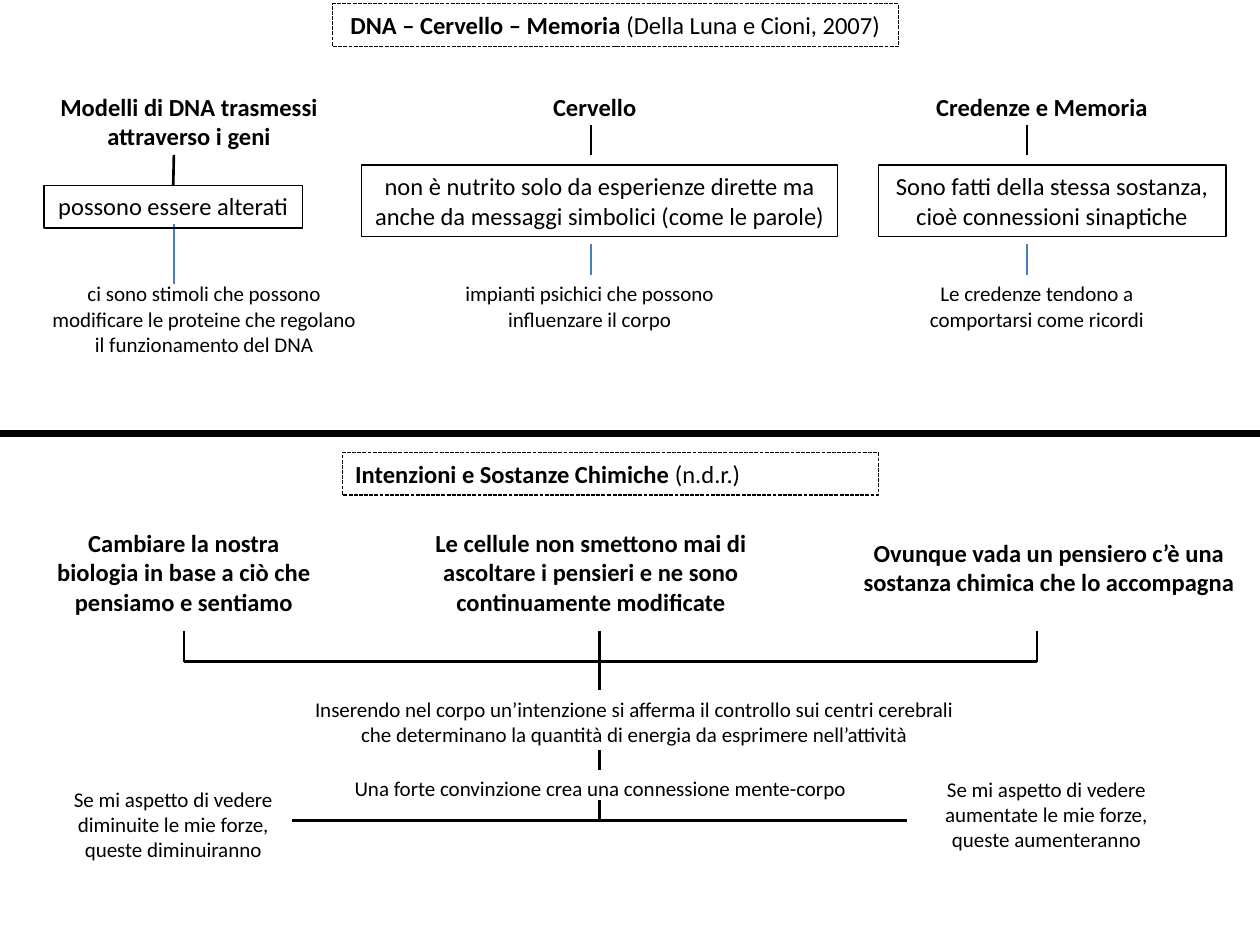
from lxml.etree import SubElement
from pptx import Presentation
from pptx.dml.color import RGBColor
from pptx.enum.dml import MSO_LINE
from pptx.enum.shapes import MSO_CONNECTOR, MSO_SHAPE
from pptx.enum.text import MSO_ANCHOR, MSO_AUTO_SIZE, PP_ALIGN
from pptx.oxml.ns import qn
from pptx.util import Inches, Pt

COLUMNS, ROWS = 100, 75
BLACK, BLUE = "000000", "4B7EBC"
HEADING, NOTE = 14, 12


def color(value):
    """Turn a hex string into a colour."""
    return RGBColor.from_string(value)


class ConceptMap:
    """Holds the style and the current slide, placed on a grid of columns and rows."""

    def __init__(self, deck):
        """Add a blank page to the deck."""
        self.column = deck.slide_width / COLUMNS
        self.row = deck.slide_height / ROWS
        self.page = deck.slides.add_slide(deck.slide_layouts[6])

    def place(self, *values):
        """Convert alternating columns and rows to lengths."""
        return [round(value * (self.row if index % 2 else self.column))
                for index, value in enumerate(values)]

    def fill_text(self, box, spans, size, align=PP_ALIGN.CENTER):
        """Fill a box with one paragraph made of (words, bold) spans."""
        frame = box.text_frame
        frame.word_wrap = True
        frame.auto_size = MSO_AUTO_SIZE.SHAPE_TO_FIT_TEXT
        frame.vertical_anchor = MSO_ANCHOR.TOP
        para = frame.paragraphs[0]
        para.alignment = align
        para.font.name = "Calibri"
        para.font.size = Pt(size)
        para.font.color.rgb = color(BLACK)
        for words, bold in spans:
            span = para.add_run()
            span.text = words
            if len(spans) > 1:
                span.font.bold = bold
            else:
                para.font.bold = bold

    def text(self, area, words, size=NOTE, bold=False):
        """Add centred text without a frame."""
        box = self.page.shapes.add_textbox(*self.place(*area))
        self.fill_text(box, [(words, bold)], size)

    def frame(self, area):
        """Add an empty outlined rectangle."""
        box = self.page.shapes.add_shape(MSO_SHAPE.RECTANGLE, *self.place(*area))
        box.shadow.inherit = False
        box.fill.background()
        box.line.color.rgb = color(BLACK)
        box.line.width = Pt(0.75)
        return box

    def statement(self, area, words):
        """Add a framed statement."""
        box = self.frame(area)
        self.fill_text(box, [(words, False)], HEADING)
        return box

    def title(self, area, topic, source, inset):
        """Add a dashed section title with its source."""
        box = self.frame(area)
        box.line.dash_style = MSO_LINE.SQUARE_DOT
        self.fill_text(box, [(topic, True), (source, False)], HEADING, PP_ALIGN.LEFT)
        box.text_frame.margin_left = Inches(inset)

    def line(self, start, end, width=1.5, tint=BLACK):
        """Add a straight connector between two grid points."""
        connector = self.page.shapes.add_connector(
            MSO_CONNECTOR.STRAIGHT, *self.place(*start, *end))
        connector.line.color.rgb = color(tint)
        connector.line.width = Pt(width)
        SubElement(connector._element.spPr, qn("a:effectLst"))
        return connector


def draw_memory(sheet):
    """Draw the upper half: DNA, brain and memory."""
    sheet.title((26.4, 0.3, 44.9, 3.4), "DNA – Cervello – Memoria ",
                "(Della Luna e Cioni, 2007)", 0.14)

    sheet.line((13.8, 22.5), (13.8, 17.8), 0.75, BLUE)
    altered = sheet.statement((3.5, 14.7, 20.5, 3.4), "possono essere alterati")
    sheet.text((1.2, 6.8, 27.6, 5.7), "Modelli di DNA trasmessi attraverso i geni",
               HEADING, True)
    sheet.line((13.8, 12.3), (13.8, 14.7)).end_connect(altered, 0)
    sheet.text((2.8, 21.8, 26.8, 7.1), "ci sono stimoli che possono modificare le "
               "proteine che regolano il funzionamento del DNA")

    branches = [
        (46.9, 35.8, "Cervello", (28.7, 37.8),
         "non è nutrito solo da esperienze dirette ma anche da messaggi simbolici "
         "(come le parole)", "impianti psichici che possono influenzare il corpo"),
        (81.5, 71.3, "Credenze e Memoria", (69.7, 27.6),
         "Sono fatti della stessa sostanza, cioè connessioni sinaptiche",
         "Le credenze tendono a comportarsi come ricordi"),
    ]
    for axis, left, heading, (box_left, box_width), statement, note in branches:
        sheet.text((left, 6.8, 22.8, 3.4), heading, HEADING, True)
        sheet.line((axis, 9.9), (axis, 12.3))
        sheet.statement((box_left, 13.1, box_width, 5.7), statement)
        sheet.line((axis, 21.8), (axis, 19.4), 0.75, BLUE)
        sheet.text((left, 21.8, 22, 5), note)


def draw_intentions(sheet):
    """Draw the lower half: intentions and chemical substances."""
    sheet.title((27.2, 35.9, 42.5, 3.4), "Intenzioni e Sostanze Chimiche ",
                "(n.d.r.)", 0.1)
    left, middle, right = 14.6, 47.6, 82.3
    bracket, base = 52.5, 65.1

    premises = [
        ((2.8, 41.4, 23.6, 8.1), left, bracket,
         "Cambiare la nostra biologia in base a ciò che pensiamo e sentiamo"),
        ((33.5, 41.4, 26.8, 8.1), middle, 54.8,
         "Le cellule non smettono mai di ascoltare i pensieri e ne sono "
         "continuamente modificate"),
        ((67.3, 42.2, 31.9, 5.7), right, bracket,
         "Ovunque vada un pensiero c’è una sostanza chimica che lo accompagna"),
    ]
    for area, axis, bottom, words in premises:
        sheet.text(area, words, HEADING, True)
        sheet.line((axis, 50.1), (axis, bottom))
    sheet.line((left, bracket), (right, bracket))

    notes = [
        ((23.2, 54.8, 54.3, 5), "Inserendo nel corpo un’intenzione si afferma il "
         "controllo sui centri cerebrali che determinano la quantità di energia da "
         "esprimere nell’attività"),
        ((26.4, 61.1, 42.5, 3),
         "Una forte convinzione crea una connessione mente-corpo"),
        ((4.3, 61.9, 18.9, 7.1),
         "Se mi aspetto di vedere diminuite le mie forze, queste diminuiranno"),
        ((73.6, 61.1, 18.9, 7.1),
         "Se mi aspetto di vedere aumentate le mie forze, queste aumenteranno"),
    ]
    for area, words in notes:
        sheet.text(area, words)
    for top, bottom in ((59.5, 61.1), (63.5, base)):
        sheet.line((middle, top), (middle, bottom))
    for end in (23.2, 72):
        sheet.line((middle, base), (end, base))


def main():
    """Build the deck and save it."""
    deck = Presentation()
    deck.slide_width, deck.slide_height = Inches(10), Inches(7.5)
    sheet = ConceptMap(deck)
    draw_memory(sheet)
    sheet.line((COLUMNS, 34.4), (0, 34.4), 4)
    draw_intentions(sheet)
    deck.save("out.pptx")


if __name__ == "__main__":
    main()
